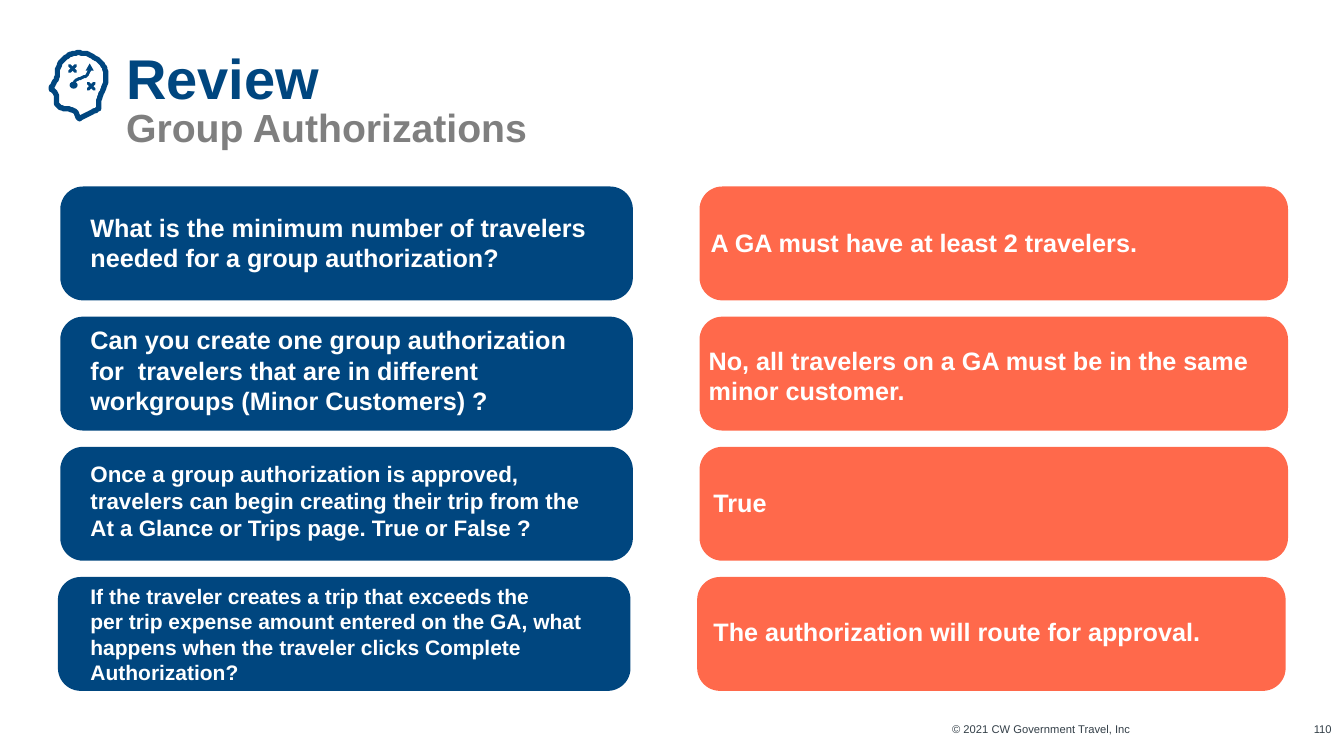
from lxml.etree import SubElement
from pptx import Presentation
from pptx.dml.color import RGBColor
from pptx.enum.shapes import MSO_CONNECTOR as Link, MSO_SHAPE as Shape
from pptx.enum.text import MSO_ANCHOR as Anchor, PP_ALIGN as Align
from pptx.oxml.ns import qn
from pptx.util import Cm, Pt

COLORS = {"navy": "00467F", "coral": "FF694B", "gray": "7F7F7F",
          "slate": "333F48", "white": "FFFFFF"}
FONT = "Arial"
ICON_UNIT = Cm(0.0254)

CARD_TOP, CARD_STEP, CARD_HEIGHT = 4.7, 3.28, 2.87
QUESTIONS = [
    (5.21, 13.56, 1.8, 18,
     ["What is the minimum number of travelers needed for a group authorization?"]),
    (8.05, 13.41, 2.57, 18,
     ["Can you create one group authorization for  travelers that are in different "
      "workgroups (Minor Customers) ?"]),
    (11.46, 13.21, 2.31, 16,
     ["Once a group authorization is approved, travelers can begin creating their trip "
      "from the At a Glance or Trips page. True or False ?"]),
    (14.58, 13.41, 2.82, 15,
     ["If the traveler creates a trip that exceeds the",
      "per trip expense amount entered on the GA, what happens when the traveler "
      "clicks Complete Authorization?"]),
]
ANSWERS = [
    (17.91, 4.7, "A GA must have at least 2 travelers."),
    (17.86, 8.05, "No, all travelers on a GA must be in the same minor customer."),
    (17.98, 11.23, "True"),
    (17.98, 14.5, "The authorization will route for approval."),
]
HEAD = [(105, 73), (105, 80), (103, 87), (100, 94), (97.5, 101), (98, 107.5),
        (90, 111.5), (79, 117.5), (75, 111), (69, 108.5), (61, 107), (56.5, 103),
        (56, 97), (55, 92), (51, 88), (53, 83), (56.5, 77), (57, 70), (61, 61),
        (68, 55), (77, 52.5), (88, 54), (98, 60), (103, 66)]
ROUTE = [(73, 84), (75, 80), (80, 77.5), (86, 75), (89, 69)]


def color(name):
    return RGBColor.from_string(COLORS[name])


def set_font(font, size, name, bold=False):
    font.name, font.size, font.bold = FONT, Pt(size), bold
    font.color.rgb = color(name)


def fill_plain(shape, name):
    shape.shadow.inherit = False
    shape.fill.solid()
    shape.fill.fore_color.rgb = color(name)
    shape.line.fill.background()


def add_card(page, left, top, width, name):
    card = page.shapes.add_shape(Shape.ROUNDED_RECTANGLE, Cm(left), Cm(top),
                                 Cm(width), Cm(CARD_HEIGHT))
    card.adjustments[0] = 0.2
    fill_plain(card, name)


def add_label(page, place, lines, size, name="white", bold=True, inset=(0, 0),
              anchor=Anchor.TOP, align=Align.LEFT):
    frame = page.shapes.add_textbox(*map(Cm, place)).text_frame
    frame.word_wrap = True
    frame.vertical_anchor = anchor
    frame.margin_left = frame.margin_right = Cm(inset[0])
    frame.margin_top = frame.margin_bottom = Cm(inset[1])
    frame.text = "\n".join(lines)
    for para in frame.paragraphs:
        para.alignment = align
        set_font(para.font, size, name, bold)


def add_title(page):
    title = page.shapes.title
    title.left, title.top, title.width, title.height = map(Cm, (3.18, 1.35, 29.29, 2.34))
    frame = title.text_frame
    frame.vertical_anchor = Anchor.TOP
    frame.margin_left = frame.margin_right = frame.margin_top = frame.margin_bottom = 0
    para = frame.paragraphs[0]
    para.alignment = Align.LEFT
    para.line_spacing = 0.85
    span = para.add_run()
    span.text = "Review"
    set_font(span.font, 40, "navy", True)
    para.add_line_break()
    span = para.add_run()
    span.text = "Group Authorizations"
    set_font(span.font, 28, "gray", True)


def smooth(points, closed):
    count = len(points)

    def at(index):
        return points[index % count if closed else min(max(index, 0), count - 1)]

    curve = []
    for index in range(count if closed else count - 1):
        corners = [at(index + shift) for shift in (-1, 0, 1, 2)]
        for step in range(6):
            t = step / 6
            curve.append(tuple(
                b + (c - a) * t / 2 + (2 * a - 5 * b + 4 * c - d) * t ** 2 / 2
                + (3 * b - a - 3 * c + d) * t ** 3 / 2
                for a, b, c, d in zip(*corners)))
    return curve if closed else curve + [points[-1]]


def style_stroke(shape, width):
    shape.line.color.rgb = color("navy")
    shape.line.width = Pt(width)
    line = shape.line._get_or_add_ln()
    line.set("cap", "rnd")
    SubElement(line, qn("a:round"))


def add_curve(page, points, closed, width):
    start, *rest = smooth(points, closed)
    builder = page.shapes.build_freeform(*start, scale=ICON_UNIT)
    builder.add_line_segments(rest, close=closed)
    curve = builder.convert_to_shape()
    curve.shadow.inherit = False
    curve.fill.background()
    style_stroke(curve, width)


def add_cross(page, x, y, arm=3):
    for rise in (-arm, arm):
        ends = (x - arm, y - rise, x + arm, y + rise)
        stroke = page.shapes.add_connector(
            Link.STRAIGHT, *(int(end * ICON_UNIT) for end in ends))
        style_stroke(stroke, 2.25)
        SubElement(stroke._element.spPr, qn("a:effectLst"))


def add_icon(page):
    add_curve(page, HEAD, True, 3.75)
    add_curve(page, ROUTE, False, 2)
    for center in ((72, 68), (90.5, 85.5)):
        add_cross(page, *center)
    for kind, place in ((Shape.OVAL, (69, 81, 8, 7)),
                        (Shape.ISOSCELES_TRIANGLE, (85, 63, 8, 7))):
        fill_plain(page.shapes.add_shape(kind, *(ICON_UNIT * side for side in place)), "navy")


def main():
    deck = Presentation()
    deck.slide_width, deck.slide_height = Cm(33.87), Cm(19.05)
    page = deck.slides.add_slide(deck.slide_layouts[5])
    add_icon(page)
    add_title(page)
    for row, (question, answer) in enumerate(zip(QUESTIONS, ANSWERS)):
        shift = 0.06 if row == len(QUESTIONS) - 1 else 0
        card_top = CARD_TOP + row * CARD_STEP
        add_card(page, 1.52 - shift, card_top, 14.43, "navy")
        add_card(page, 17.63 - shift, card_top, 14.83, "coral")
        top, width, height, size, lines = question
        add_label(page, (2.03, top, width, height), lines, size, inset=(0.25, 0.13))
        left, top, text = answer
        add_label(page, (left, top, 14.45, 2.84), [text], 18, anchor=Anchor.MIDDLE)
    for place, text in (((21.29, 18.21, 7.2, 0.36), "© 2021 CW Government Travel, Inc"),
                        ((32.72, 18.21, 0.84, 0.36), "110")):
        add_label(page, place, [text], 8, "slate", False, align=Align.RIGHT)
    deck.save("out.pptx")


if __name__ == "__main__":
    main()
